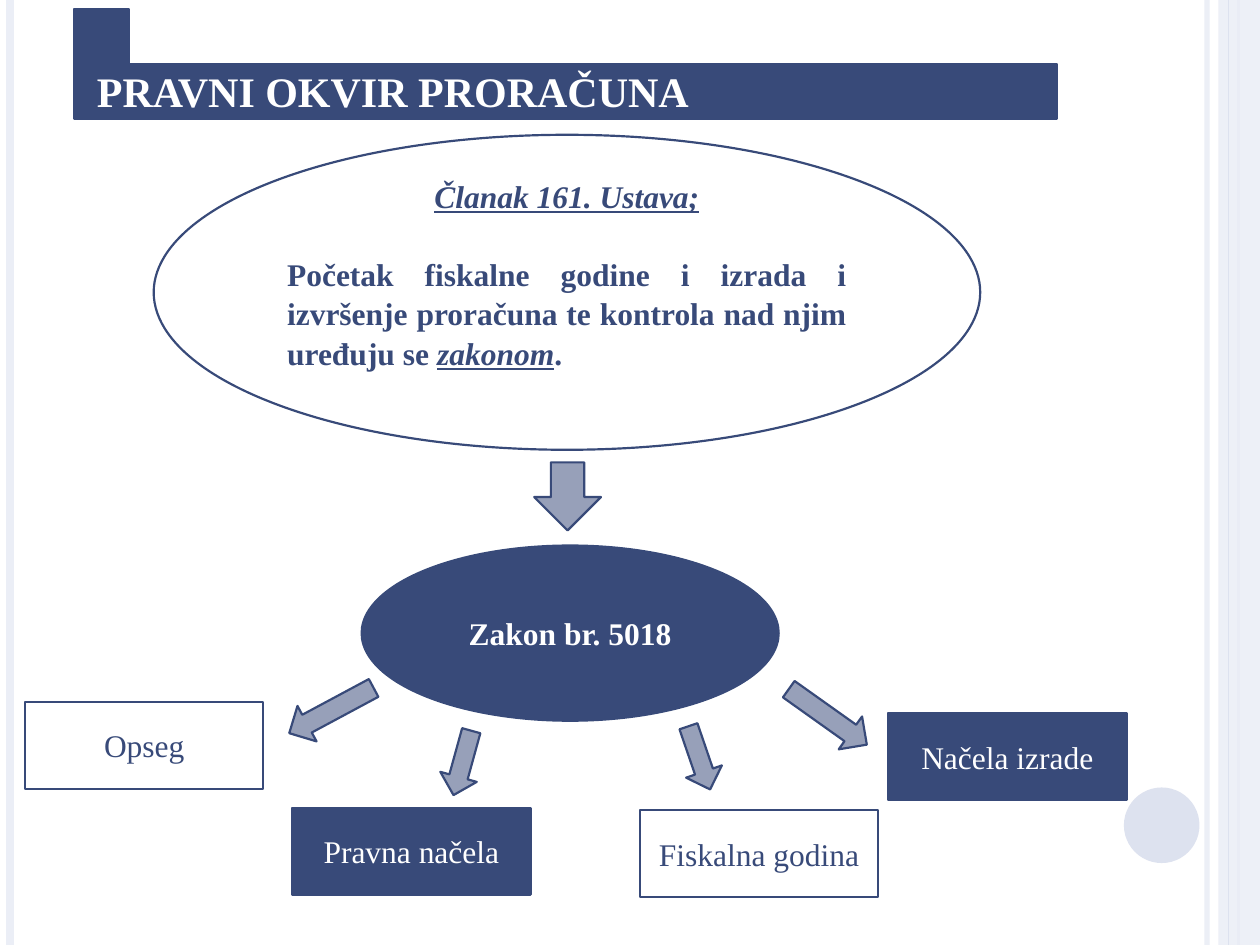
from dataclasses import dataclass

from lxml import etree
from pptx import Presentation
from pptx.dml.color import RGBColor
from pptx.enum.shapes import MSO_CONNECTOR, MSO_SHAPE as Preset
from pptx.enum.text import MSO_ANCHOR, PP_ALIGN as Align
from pptx.oxml.ns import qn
from pptx.util import Inches, Pt

NAVY, WHITE = "384A79", "FFFFFF"
PALE, MIST = "EBEEF6", "DDE2EF"
FONT = "Times New Roman"


@dataclass
class Stripe:
    x: float
    color: str
    width: float
    opacity: int = 100


@dataclass
class Topic:
    label: str
    left: float
    top: float
    filled: bool


@dataclass
class Arrow:
    left: float
    top: float
    width: float
    height: float
    rotation: float = 0


STRIPES = [
    Stripe(9.58, PALE, 3, 93),
    Stripe(0.08, PALE, 4.5),
    Stripe(9.83, MIST, 1.5),
]
INNER_STRIPE = Stripe(9.75, MIST, 0.75)

TOPICS = [
    Topic("Opseg", 0.2, 5.57, False),
    Topic("Pravna načela", 2.32, 6.41, True),
    Topic("Fiskalna godina", 5.08, 6.43, False),
    Topic("Načela izrade", 7.05, 5.66, True),
]

ARROWS = [
    Arrow(4.24, 3.67, 0.53, 0.54),
    Arrow(2.47, 5.26, 0.32, 0.76, 61.8),
    Arrow(3.52, 5.79, 0.3, 0.53, 15.4),
    Arrow(5.4, 5.75, 0.3, 0.53, 341.1),
    Arrow(6.41, 5.31, 0.32, 0.76, 305.4),
]


def paint(target, color: str, opacity: int = 100) -> None:
    """Make a fill solid, with transparency when opacity is below 100."""
    target.solid()
    target.fore_color.rgb = RGBColor.from_string(color)
    if opacity < 100:
        clr = target._xPr.find(qn("a:solidFill")).find(qn("a:srgbClr"))
        etree.SubElement(clr, qn("a:alpha")).set("val", str(opacity * 1000))


def add_stripe(slide, stripe: Stripe) -> None:
    x = Inches(stripe.x)
    line = slide.shapes.add_connector(
        MSO_CONNECTOR.STRAIGHT, x, 0, x, Inches(7.5))
    line.line.width = Pt(stripe.width)
    paint(line.line.fill, stripe.color, stripe.opacity)
    etree.SubElement(line._element.spPr, qn("a:effectLst"))


def add_figure(slide, preset, left: float, top: float, width: float,
               height: float, fill: str, outline: str | None = NAVY,
               opacity: int = 100):
    figure = slide.shapes.add_shape(
        preset, Inches(left), Inches(top), Inches(width), Inches(height))
    figure.shadow.inherit = False
    paint(figure.fill, fill, opacity)
    if outline:
        paint(figure.line.fill, outline)
        figure.line.width = Pt(1.25)
    else:
        figure.line.fill.background()
    frame = figure.text_frame
    frame.word_wrap = True
    frame.vertical_anchor = MSO_ANCHOR.MIDDLE
    return figure


def style(paragraph, color: str, size: float = 18, bold: bool = False,
          align=Align.CENTER) -> None:
    paragraph.alignment = align
    font = paragraph.font
    font.name, font.size, font.bold = FONT, Pt(size), bold
    font.color.rgb = RGBColor.from_string(color)


def write(figure, text: str, color: str, **options) -> None:
    paragraph = figure.text_frame.paragraphs[0]
    paragraph.text = text
    style(paragraph, color, **options)


def add_article(slide) -> None:
    article = add_figure(slide, Preset.OVAL, 1.22, 1.07, 6.56, 2.5, WHITE)
    frame = article.text_frame
    frame.margin_bottom = Inches(0.35)

    heading = frame.paragraphs[0]
    heading.text = "Članak 161. Ustava;"
    style(heading, NAVY, bold=True)
    heading.font.italic = heading.font.underline = True
    heading.space_after = Pt(21.7)

    provision = frame.add_paragraph()
    style(provision, NAVY, bold=True, align=Align.JUSTIFY)
    for text, emphasised in [
        ("Početak fiskalne godine i izrada i izvršenje proračuna "
         "te kontrola nad njim uređuju se ", False),
        ("zakonom", True),
        (".", False),
    ]:
        run = provision.add_run()
        run.text = text
        run.font.italic = run.font.underline = emphasised

    for paragraph in frame.paragraphs:
        paragraph.line_spacing = 1.05


def main() -> None:
    prs = Presentation()
    prs.slide_width, prs.slide_height = Inches(10), Inches(7.5)
    slide = prs.slides.add_slide(prs.slide_layouts[6])

    for stripe in STRIPES:
        add_stripe(slide, stripe)
    add_figure(slide, Preset.RECTANGLE, 9.67, 0, 0.33, 7.5, PALE, None, 87)
    add_stripe(slide, INNER_STRIPE)
    add_figure(slide, Preset.OVAL, 8.92, 6.25, 0.6, 0.6, MIST, None)

    title = add_figure(slide, Preset.CORNER, 0.59, 0.07, 7.8, 0.87, NAVY)
    title.text_frame.margin_left = Inches(0.18)
    write(title, "PRAVNI OKVIR PRORAČUNA", WHITE,
          size=24, bold=True, align=Align.LEFT)

    add_article(slide)

    for topic in TOPICS:
        fill, ink = (NAVY, WHITE) if topic.filled else (WHITE, NAVY)
        box = add_figure(slide, Preset.RECTANGLE, topic.left, topic.top,
                         1.89, 0.69, fill)
        write(box, topic.label, ink)

    law = add_figure(slide, Preset.OVAL, 2.87, 4.33, 3.31, 1.39, NAVY)
    write(law, "Zakon br. 5018", WHITE, bold=True)

    for arrow in ARROWS:
        pointer = add_figure(slide, Preset.DOWN_ARROW, arrow.left, arrow.top,
                             arrow.width, arrow.height, NAVY, opacity=52)
        pointer.rotation = arrow.rotation

    prs.save("out.pptx")


if __name__ == "__main__":
    main()
